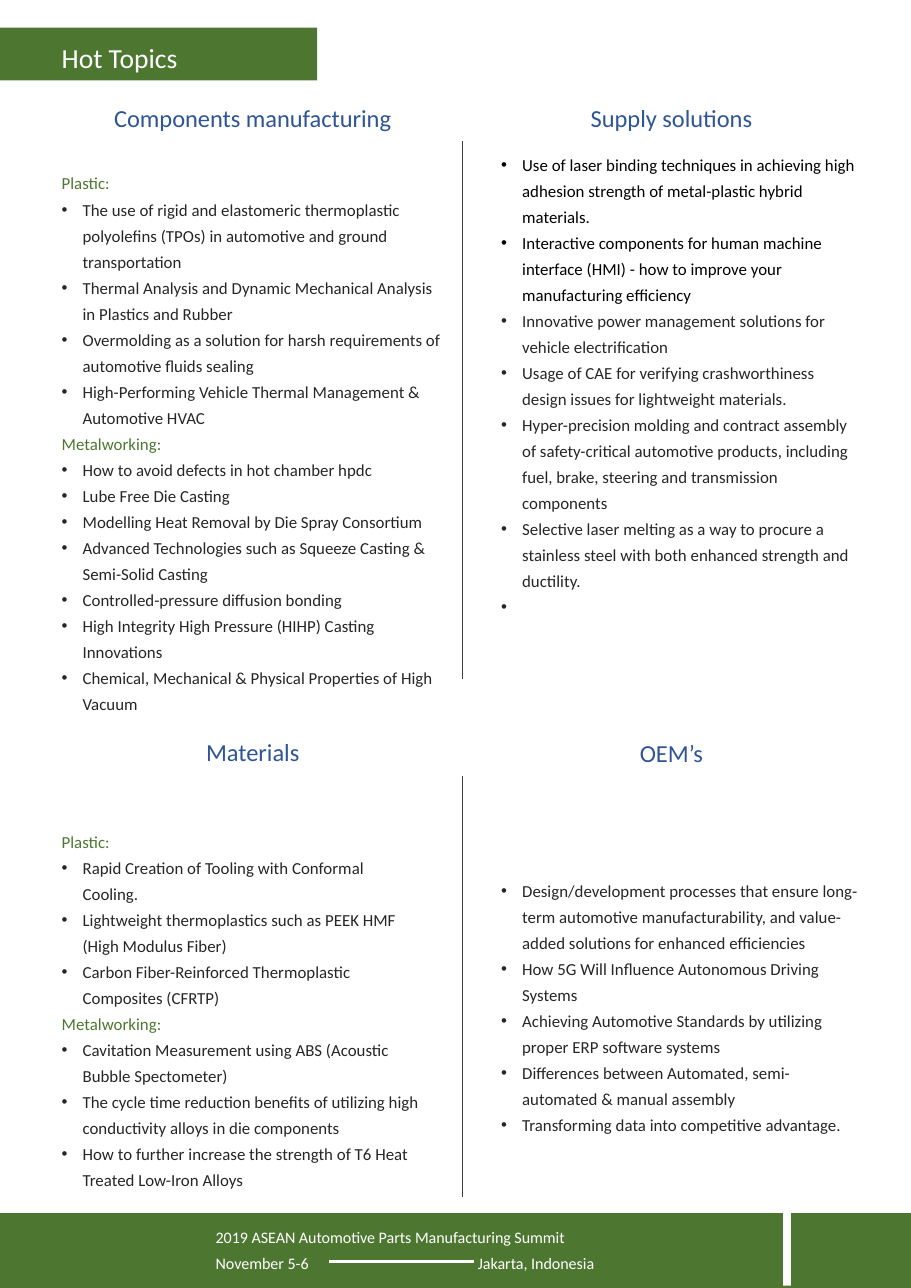
from lxml import etree
from pptx import Presentation
from pptx.dml.color import RGBColor
from pptx.enum.shapes import MSO_CONNECTOR, MSO_SHAPE
from pptx.enum.text import MSO_ANCHOR, MSO_AUTO_SIZE, PP_ALIGN
from pptx.oxml.ns import qn
from pptx.util import Inches, Pt

LEFT, CENTER = PP_ALIGN.LEFT, PP_ALIGN.CENTER
TOP, BOTTOM = MSO_ANCHOR.TOP, MSO_ANCHOR.BOTTOM
RECTANGLE, STRAIGHT = MSO_SHAPE.RECTANGLE, MSO_CONNECTOR.STRAIGHT

GREEN, BLUE, WHITE = "4D7731", "2F5597", "FFFFFF"
BLACK, DARK, GRAY = "000000", "262626", "404040"
FONT = "Calibri"

# Content: each topic has a heading, its box, a list box, and groups of
# (subheading, item colour, items)
PAGE_TITLE = "Hot Topics"
FOOTER = [
    ((1.86, 11.09, 5.2, 0.29), "2019 ASEAN Automotive Parts Manufacturing Summit"),
    ((1.86, 11.33, 1.1, 0.29), "November 5-6"),
    ((4.24, 11.33, 2.8, 0.29), "Jakarta, Indonesia"),
]
TOPICS = [
    ("Components manufacturing", (0.68, 0.95, 3.23, 0.3), (0.46, 1.48, 3.68, 5.05), [
        ("Plastic:", DARK, [
            "The use of rigid and elastomeric thermoplastic polyolefins (TPOs) in automotive and ground transportation",
            "Thermal Analysis and Dynamic Mechanical Analysis in Plastics and Rubber",
            "Overmolding as a solution for harsh requirements of automotive fluids sealing",
            "High-Performing Vehicle Thermal Management & Automotive HVAC",
        ]),
        ("Metalworking:", DARK, [
            "How to avoid defects in hot chamber hpdc",
            "Lube Free Die Casting",
            "Modelling Heat Removal by Die Spray Consortium",
            "Advanced Technologies such as Squeeze Casting & Semi-Solid Casting",
            "Controlled-pressure diffusion bonding",
            "High Integrity High Pressure (HIHP) Casting Innovations",
            "Chemical, Mechanical & Physical Properties of High Vacuum",
        ]),
    ]),
    ("Supply solutions", (4.97, 0.98, 2.25, 0.27), (4.45, 1.4, 3.45, 4.25), [
        (None, BLACK, [
            "Use of laser binding techniques in achieving high adhesion strength of metal-plastic hybrid materials.",
            "Interactive components for human machine interface (HMI) - how to improve your manufacturing efficiency",
        ]),
        (None, DARK, [
            "Innovative power management solutions for vehicle electrification",
            "Usage of CAE for verifying crashworthiness design issues for lightweight materials.",
            "Hyper-precision molding and contract assembly of safety-critical automotive products, including fuel, brake, steering and transmission components",
            "Selective laser melting as a way to procure a stainless steel with both enhanced strength and ductility.",
            " ",  # the list closes with a bare bullet
        ]),
    ]),
    ("Materials", (0.68, 6.71, 3.23, 0.3), (0.46, 7.04, 3.45, 3.81), [
        ("Plastic:", DARK, [
            "Rapid Creation of Tooling with Conformal Cooling.",
            "Lightweight thermoplastics such as PEEK HMF (High Modulus Fiber)",
            "Carbon Fiber-Reinforced Thermoplastic Composites (CFRTP)",
        ]),
        ("Metalworking:", DARK, [
            "Cavitation Measurement using ABS (Acoustic Bubble Spectometer)",
            "The cycle time reduction benefits of utilizing high conductivity alloys in die components",
            "How to further increase the strength of T6 Heat Treated Low-Iron Alloys",
        ]),
    ]),
    ("OEM’s", (4.97, 6.74, 2.25, 0.27), (4.45, 7.33, 3.45, 3.02), [
        (None, DARK, [
            "Design/development processes that ensure long-term automotive manufacturability, and value-added solutions for enhanced efficiencies",
            "How 5G Will Influence Autonomous Driving Systems",
            "Achieving Automotive Standards by utilizing proper ERP software systems",
            "Differences between Automated, semi-automated & manual assembly",
            "Transforming data into competitive advantage.",
        ]),
    ]),
]
BARS = [
    (0, 11.01, 8.27, 0.68, GREEN),
    (7.11, 11.01, 0.07, 0.66, WHITE),
    (0, 0.25, 2.88, 0.48, GREEN),
]
LINES = [
    (2.99, 11.45, 4.3, 11.45, WHITE, 1.5),
    (4.2, 1.28, 4.2, 6.16, GRAY, 1),
    (4.2, 7.04, 4.2, 10.86, GRAY, 1),
]


def color(hex_text):
    return RGBColor.from_string(hex_text)


def place(box, at, anchor=TOP):
    box.left, box.top, box.width, box.height = [Inches(n) for n in at]
    frame = box.text_frame
    frame.word_wrap = True
    frame.auto_size = MSO_AUTO_SIZE.NONE
    frame.vertical_anchor = anchor


def write(box, text, size=11, fill=DARK, align=LEFT, spacing=None,
          bullet=False, first=True):
    frame = box.text_frame
    para = frame.paragraphs[0] if first else frame.add_paragraph()
    para.alignment = align
    para.space_before = Pt(0)
    if spacing:
        para.line_spacing = Pt(spacing)
    props = para._p.get_or_add_pPr()
    indent = Inches(0.19) if bullet else 0
    props.set("marL", str(indent))
    props.set("indent", str(-indent))
    if bullet:
        etree.SubElement(props, qn("a:buFont"), typeface="Arial")
        etree.SubElement(props, qn("a:buChar"), char="•")
    else:
        etree.SubElement(props, qn("a:buNone"))
    span = para.add_run()
    span.text = text
    span.font.name = FONT
    span.font.size = Pt(size)
    span.font.bold = False
    span.font.color.rgb = color(fill)


def add_text(page, at, text, anchor=TOP, **style):
    box = page.shapes.add_textbox(0, 0, 0, 0)
    place(box, at, anchor)
    write(box, text, **style)


def main():
    deck = Presentation()
    deck.slide_width, deck.slide_height = Inches(8.27), Inches(11.69)
    page = deck.slides.add_slide(deck.slide_layouts[4])
    title, *list_boxes = page.placeholders

    # Bars go behind the text
    for order, (left, top, width, height, fill) in enumerate(BARS):
        bar = page.shapes.add_shape(RECTANGLE, Inches(left), Inches(top),
                                    Inches(width), Inches(height))
        bar.shadow.inherit = False
        bar.fill.solid()
        bar.fill.fore_color.rgb = color(fill)
        bar.line.fill.background()
        page.shapes._spTree.insert(2 + order, bar._element)

    # Title
    place(title, (0.46, 0.32, 7.28, 0.4))
    write(title, PAGE_TITLE, size=18, fill=WHITE)

    # Four topics
    for list_box, (heading, heading_at, list_at, groups) in zip(list_boxes, TOPICS):
        add_text(page, heading_at, heading, anchor=BOTTOM, size=16, fill=BLUE,
                 align=CENTER, spacing=19)
        place(list_box, list_at, BOTTOM)
        rows = []
        for subheading, fill, items in groups:
            if subheading:
                rows.append((subheading, GREEN, False))
            rows += [(item, fill, True) for item in items]
        for number, (text, fill, bullet) in enumerate(rows):
            write(list_box, text, fill=fill, bullet=bullet, spacing=17,
                  first=number == 0)

    # Footer text, with the place name after the dash
    for at, text in FOOTER:
        add_text(page, at, text, size=10.5, fill=WHITE)

    # Column dividers and footer dash
    for x1, y1, x2, y2, fill, weight in LINES:
        line = page.shapes.add_connector(STRAIGHT, Inches(x1), Inches(y1),
                                         Inches(x2), Inches(y2))
        line.line.color.rgb = color(fill)
        line.line.width = Pt(weight)
        etree.SubElement(line._element.spPr, qn("a:effectLst"))

    deck.save("out.pptx")


if __name__ == "__main__":
    main()
